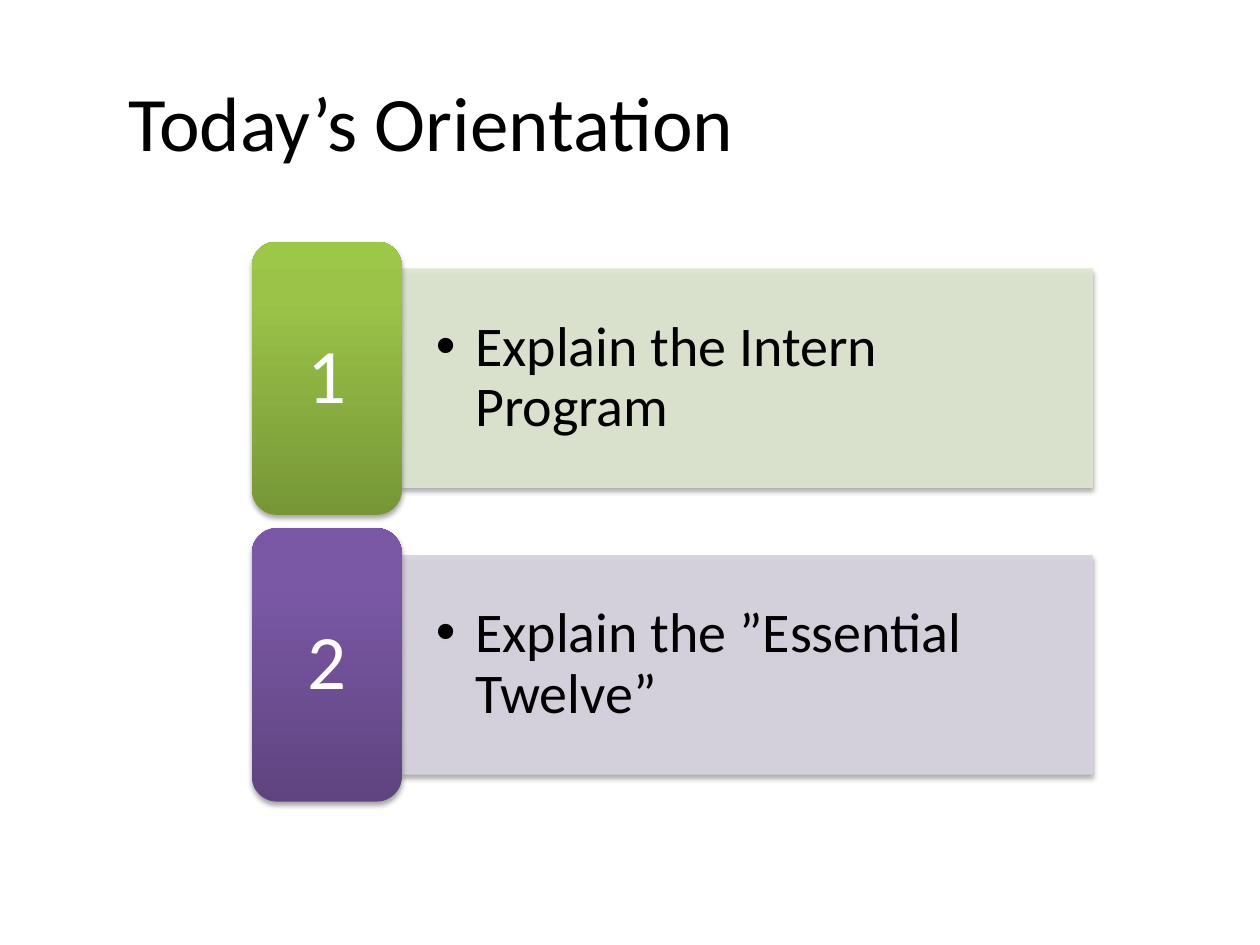
from lxml.etree import SubElement
from pptx import Presentation
from pptx.dml.color import RGBColor
from pptx.enum.shapes import MSO_SHAPE
from pptx.enum.text import MSO_ANCHOR, PP_ALIGN
from pptx.oxml import parse_xml
from pptx.oxml.ns import nsdecls, qn
from pptx.util import Cm, Pt

# Content
TITLE = "Today’s Orientation"
STEPS = [
    ("1", "Explain the Intern Program", "green"),
    ("2", "Explain the ”Essential Twelve”", "purple"),
]
COLORS = {"text": "000000", "number": "FFFFFF", "shadow": "000000"}
PANEL_COLORS = {"green": "DEE7D1", "purple": "D8D3E0"}
TAB_GRADIENTS = {
    "green": [(0, "779737"), (80, "9BC348"), (100, "9DC746")],
    "purple": [(0, "5F4480"), (80, "7B58A6"), (100, "7C57A8")],
}
FONT = "Calibri"

# Layout in centimetres
TAB_LEFT, TAB_TOP, TAB_WIDTH, TAB_HEIGHT = 5.08, 4.87, 3.02, 5.51
PANEL_WIDTH, PANEL_HEIGHT = 13.92, 4.4
STEP_PITCH = 5.78
BULLET_INDENT = 0.79


def write(shape, text, size, color, margins, align=PP_ALIGN.LEFT, spacing=None):
    frame = shape.text_frame
    frame.text = text
    frame.word_wrap = True
    frame.vertical_anchor = MSO_ANCHOR.MIDDLE
    frame.margin_left = frame.margin_right = Cm(margins[0])
    frame.margin_top = frame.margin_bottom = Cm(margins[1])
    paragraph = frame.paragraphs[0]
    paragraph.alignment = align
    paragraph.line_spacing = spacing
    font = paragraph.runs[0].font
    font.name, font.size = FONT, Pt(size)
    font.color.rgb = RGBColor.from_string(color)
    return paragraph


def add_bullet(paragraph):
    properties = paragraph._p.get_or_add_pPr()
    properties.set("marL", str(Cm(BULLET_INDENT)))
    properties.set("indent", str(-Cm(BULLET_INDENT)))
    SubElement(properties, qn("a:buFont"), typeface="Arial")
    SubElement(properties, qn("a:buChar"), char="•")


def add_shadow(shape):
    shape.shadow.inherit = False
    effects = shape._element.spPr.find(qn("a:effectLst"))
    effects.append(parse_xml(
        f'<a:outerShdw {nsdecls("a")} blurRad="{Pt(3.1)}" dist="{Pt(1.8)}" '
        f'dir="5400000" rotWithShape="0"><a:srgbClr val="{COLORS["shadow"]}">'
        '<a:alpha val="35000"/></a:srgbClr></a:outerShdw>'))


def set_gradient(shape, stops):
    shape.fill.background()
    properties = shape._element.spPr
    stop_xml = "".join(
        f'<a:gs pos="{position * 1000}"><a:srgbClr val="{color}"/></a:gs>'
        for position, color in stops)
    properties.replace(properties.find(qn("a:noFill")), parse_xml(
        f'<a:gradFill {nsdecls("a")} rotWithShape="1"><a:gsLst>{stop_xml}</a:gsLst>'
        '<a:lin ang="16200000" scaled="0"/></a:gradFill>'))


def add_panel(slide, top, text, color):
    panel = slide.shapes.add_shape(
        MSO_SHAPE.RECTANGLE, Cm(TAB_LEFT + TAB_WIDTH), Cm(top),
        Cm(PANEL_WIDTH), Cm(PANEL_HEIGHT))
    panel.fill.solid()
    panel.line.width = Pt(0.75)
    panel.line.fill.solid()
    for fill in (panel.fill, panel.line.fill):
        fill.fore_color.rgb = RGBColor.from_string(color)
    for color_element in panel._element.spPr.iter(qn("a:srgbClr")):
        SubElement(color_element, qn("a:alpha"), val="90000")
    add_shadow(panel)
    add_bullet(write(panel, text, 32, COLORS["text"], (0.69, 0.36), spacing=0.9))


def add_tab(slide, top, number, stops):
    tab = slide.shapes.add_shape(
        MSO_SHAPE.ROUNDED_RECTANGLE, Cm(TAB_LEFT), Cm(top),
        Cm(TAB_WIDTH), Cm(TAB_HEIGHT))
    set_gradient(tab, stops)
    tab.line.fill.background()
    add_shadow(tab)
    write(tab, number, 44, COLORS["number"], (0.46, 0.23), PP_ALIGN.CENTER, 0.9)


def main():
    presentation = Presentation()
    presentation.slide_width, presentation.slide_height = Cm(25.4), Cm(19.05)
    slide = presentation.slides.add_slide(presentation.slide_layouts[6])

    # Title
    title = slide.shapes.add_textbox(Cm(2.34), Cm(0.84), Cm(22.43), Cm(3.18))
    write(title, TITLE, 44, COLORS["text"], (0.25, 0.13))

    # Numbered steps: each panel is centred on its tab
    for index, (number, text, theme) in enumerate(STEPS):
        top = TAB_TOP + index * STEP_PITCH
        add_panel(slide, top + (TAB_HEIGHT - PANEL_HEIGHT) / 2, text,
                  PANEL_COLORS[theme])
        add_tab(slide, top, number, TAB_GRADIENTS[theme])

    presentation.save("out.pptx")


if __name__ == "__main__":
    main()
